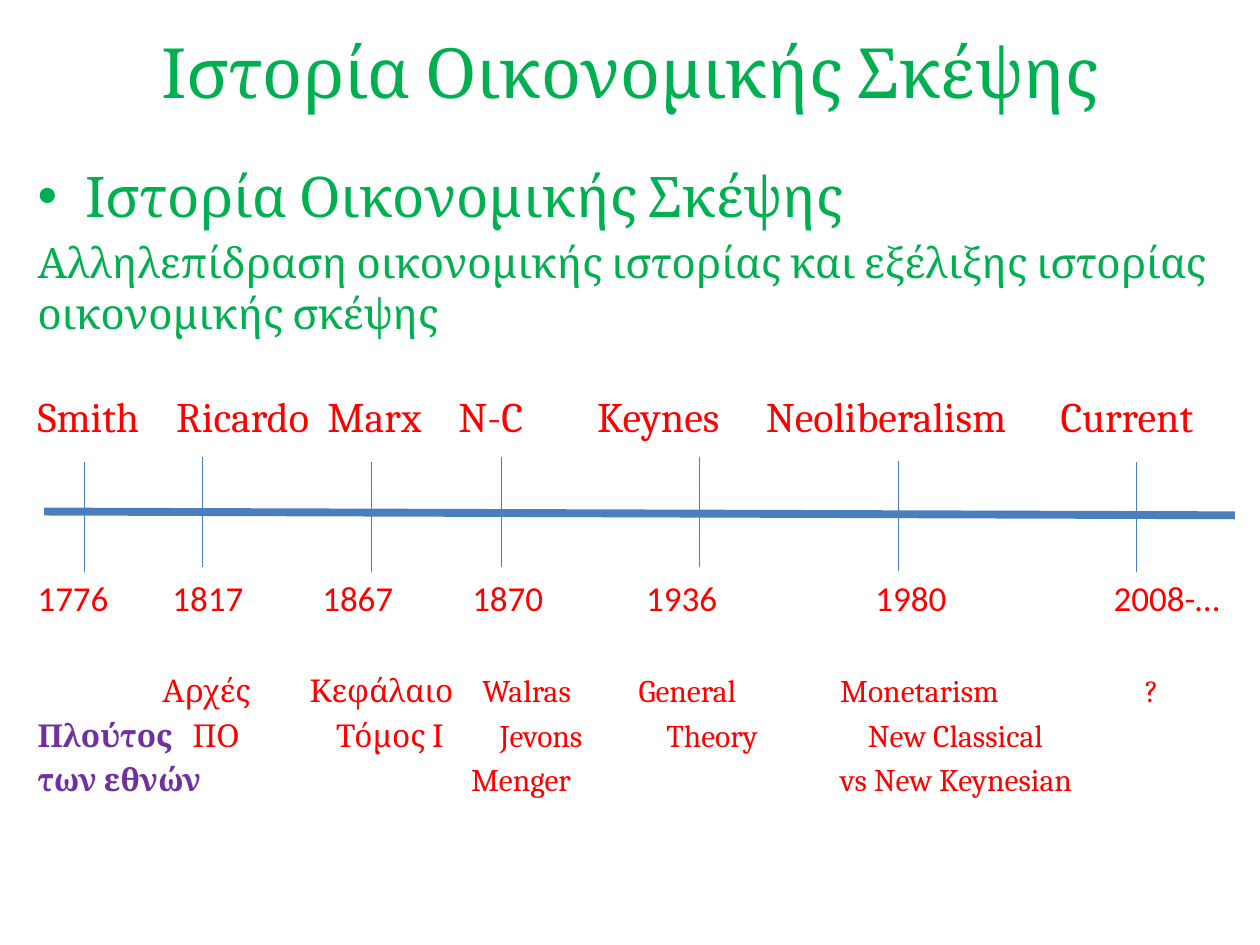
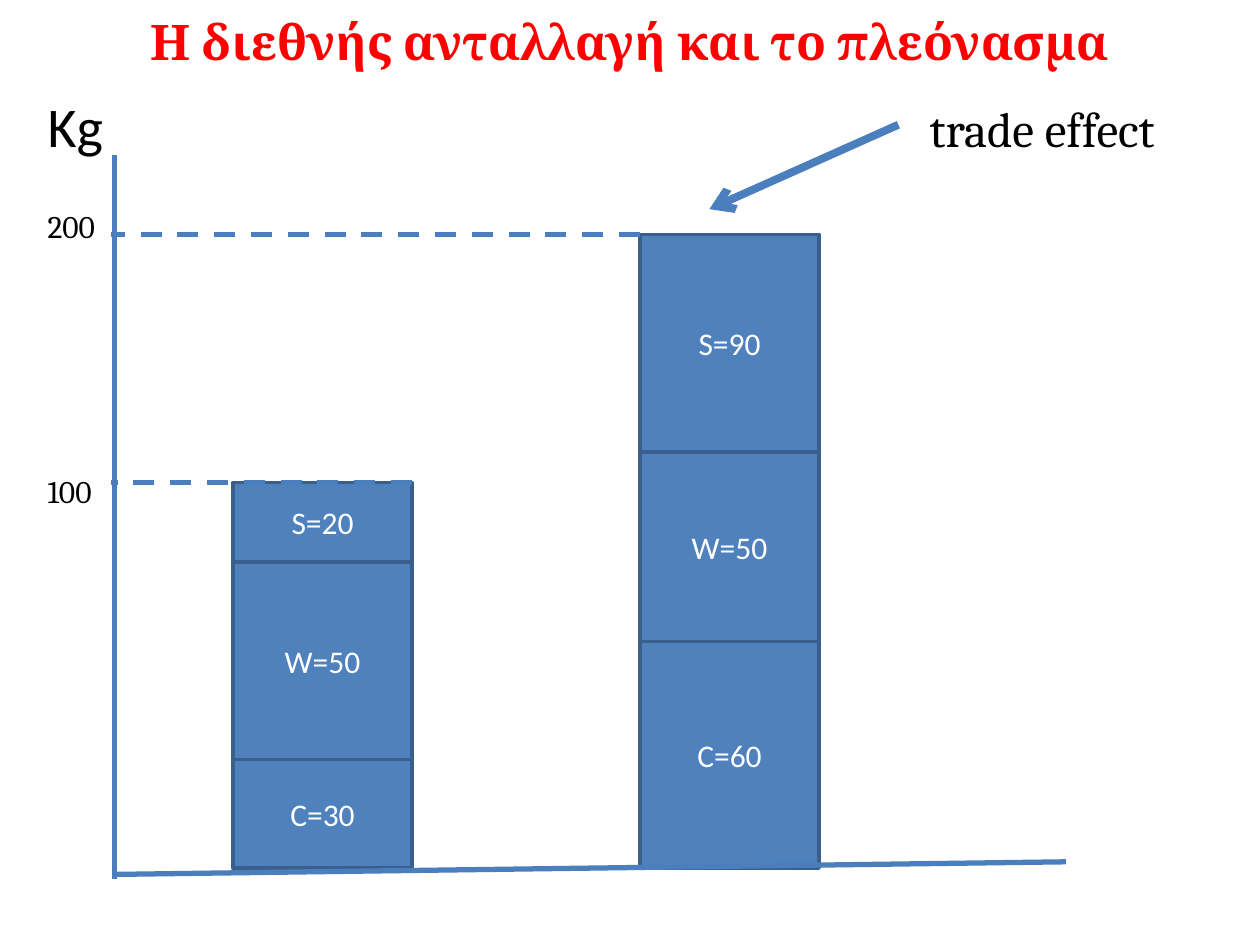
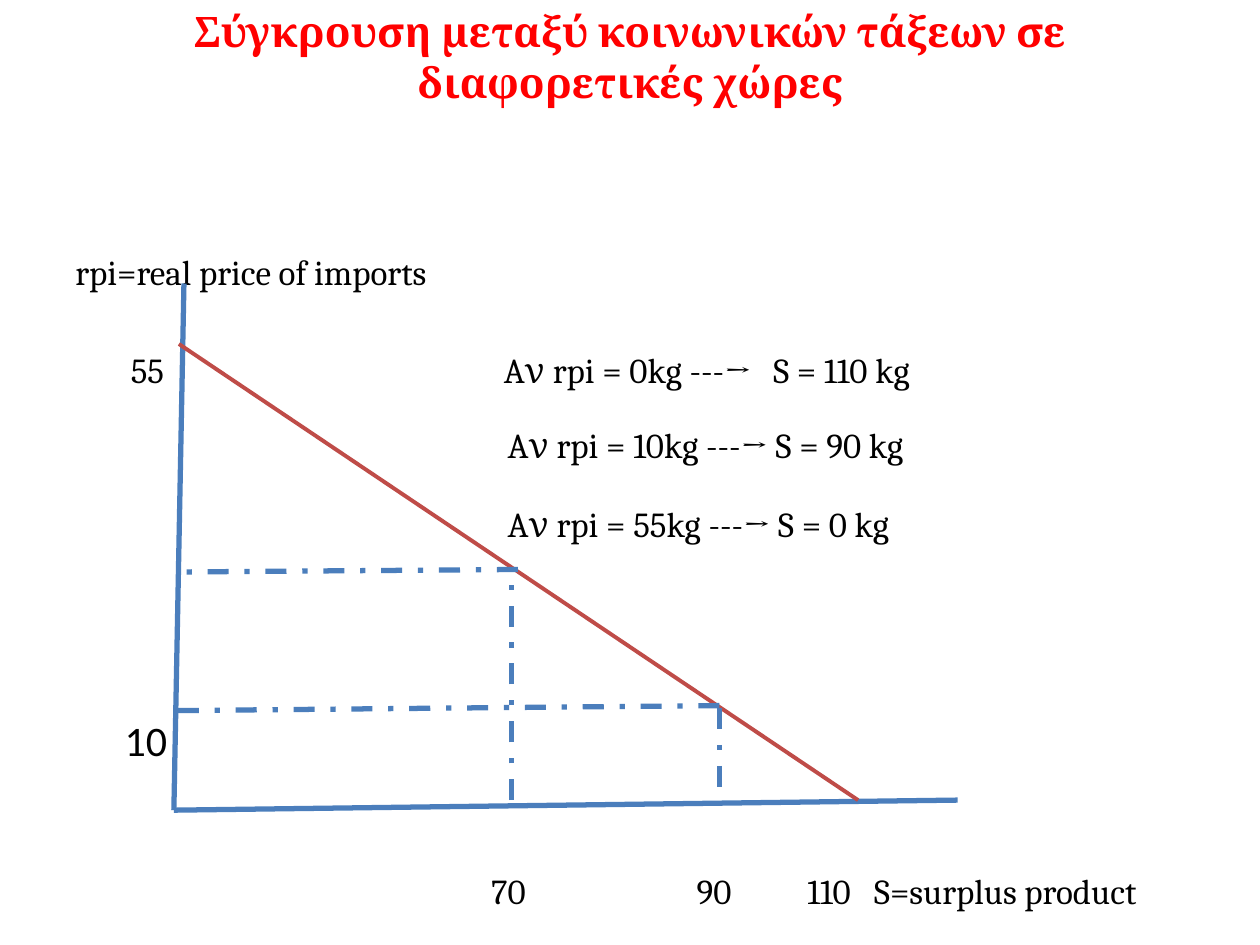
import pptx
import pptx.util
import pptx.dml.color
import pptx.enum.dml
import pptx.enum.shapes
import pptx.enum.text
import lxml.etree
import pptx.oxml.ns

presentation = pptx.Presentation()
presentation.slide_width = pptx.util.Inches(10)
presentation.slide_height = pptx.util.Inches(7.5)
column = presentation.slide_width / 100
row = presentation.slide_height / 75

GREEN, RED, PURPLE, BLACK, WHITE = "00B050", "FF0000", "7030A0", "000000", "FFFFFF"
LINE_BLUE, LINE_RED, BAR_FILL, BAR_EDGE = "4B7EBC", "BF4C48", "4F81BD", "3A5F8C"
SOLID = pptx.enum.dml.MSO_LINE.SOLID
DASH = pptx.enum.dml.MSO_LINE.DASH
DASH_DOT = pptx.enum.dml.MSO_LINE.DASH_DOT
MIDDLE = pptx.enum.text.MSO_ANCHOR.MIDDLE
CENTER = pptx.enum.text.PP_ALIGN.CENTER


def color(value):
    return pptx.dml.color.RGBColor.from_string(value)


def add_run(paragraph, text, size, font, tone, bold=False):
    run = paragraph.add_run()
    run.text = text
    run.font.size = pptx.util.Pt(size)
    run.font.name = font
    run.font.bold = bold
    run.font.color.rgb = color(tone)


heading = (32, "Cambria", GREEN)
statement = (24, "Cambria", GREEN)
thinker = (24, "Cambria", RED)
year = (20, "Calibri", RED)
work = (18, "Cambria", RED)
first_work = (18, "Cambria", PURPLE, True)
unit = (32, "Calibri", BLACK)
effect = (28, "Cambria", BLACK)
level = (18, "Cambria", BLACK)
note = (20, "Cambria", BLACK)
price = (24, "Calibri", BLACK)

ticks = [(6.7, 36.7), (16.1, 36.3), (29.5, 36.7), (39.8, 36.3),
         (55.5, 36.3), (90.2, 36.7), (71.3, 36.6)]

slides = [
    {
        "title": ("Ιστορία Οικονομικής Σκέψης", 2.1, 7.1, (39.6, "Cambria", GREEN)),
        "body": (2, 12.3, 98, 59.8),
        "paragraphs": [
            (0, [(0, "Ιστορία Οικονομικής Σκέψης", heading)]),
            (4.8, [(0, "Αλληλεπίδραση οικονομικής ιστορίας και εξέλιξης ιστορίας "
                       "οικονομικής σκέψης", statement)]),
            (30, [(0, "Smith", thinker), (11, "Ricardo", thinker), (23, "Marx", thinker),
                  (33.4, "N-C", thinker), (44.4, "Keynes", thinker),
                  (57.8, "Neoliberalism", thinker), (81.2, "Current", thinker)]),
            (77.5, [(0, "1776", year), (10.7, "1817", year), (22.6, "1867", year),
                    (34.5, "1870", year), (48.3, "1936", year), (66.5, "1980", year),
                    (85.4, "2008-…", year)]),
            (30.5, [(9.9, "Αρχές", work), (21.6, "Κεφάλαιο", work), (35.3, "Walras", work),
                    (47.7, "General", work), (63.7, "Monetarism", work), (87.9, "?", work)]),
            (3.6, [(0, "Πλούτος", first_work), (12.3, "ΠΟ", work), (23.7, "Τόμος Ι", work),
                   (36.7, "Jevons", work), (49.9, "Theory", work),
                   (65.9, "New Classical", work)]),
            (3.6, [(0, "των εθνών", first_work), (34.4, "Menger", work),
                   (63.7, "vs New Keynesian", work)]),
        ],
        "bars": [],
        "lines": [(3.5, 40.6, 98, 40.9, LINE_BLUE, 4.5, SOLID)]
                 + [(x, top, x, top + 8.7, LINE_BLUE, 0.75, SOLID) for x, top in ticks],
    },
    {
        "title": ("Η διεθνής ανταλλαγή και το πλεόνασμα", 1.3, 3.9, (28, "Cambria", RED, True)),
        "body": (2.8, 6.8, 93.7, 65.4),
        "paragraphs": [
            (0, [(0, "Kg", unit), (70, "trade effect", effect)]),
            (27.5, [(0, "200", level)]),
            (129.5, [(0, "100", level)]),
        ],
        "bars": [
            (18.5, [("C=30", 8.6), ("W=50", 15.7), ("S=20", 6.3)]),
            (50.8, [("C=60", 18), ("W=50", 15), ("S=90", 17.3)]),
        ],
        "lines": [
            (9.1, 12.3, 9.1, 69.8, LINE_BLUE, 3, SOLID),
            (84.6, 68.4, 9.1, 69.4, LINE_BLUE, 3, SOLID),
            (71.3, 9.9, 56.3, 16.6, LINE_BLUE, 4.5, "arrow"),
            (50.8, 18.6, 8.8, 18.6, LINE_BLUE, 3, DASH),
            (32.7, 38.3, 8.8, 38.3, LINE_BLUE, 3, DASH),
        ],
    },
    {
        "title": ("Σύγκρουση μεταξύ κοινωνικών τάξεων σε διαφορετικές χώρες", 0.5, 7.9,
                  (24, "Cambria", RED, True)),
        "body": (5, 19.4, 90, 51.2),
        "paragraphs": [
            (0, [(0, "rpi=real price of imports", note)]),
            (32, [(4.4, "55", note), (34, "Aν rpi = 0kg ---→", note),
                  (55.4, "S = 110 kg", note)]),
            (18.5, [(34.3, "Aν rpi = 10kg ---→ S = 90 kg", note)]),
            (21.5, [(34.3, "Aν rpi = 55kg ---→ S = 0 kg", note)]),
            (97, [(3.9, "10", price)]),
            (59.5, [(33, "70", note), (49.3, "90", note), (58.1, "110", note),
                    (63.4, "S=surplus product", note)]),
        ],
        "bars": [],
        "lines": [
            (14.6, 22.5, 13.8, 64.3, LINE_BLUE, 3, SOLID),
            (76, 63.5, 13.8, 64.3, LINE_BLUE, 3, SOLID),
            (14.2, 27.3, 68.1, 63.5, LINE_RED, 2.25, SOLID),
            (57.1, 56, 13.8, 56.4, LINE_BLUE, 3, DASH_DOT),
            (57.1, 56.2, 57.1, 63.7, LINE_BLUE, 3, DASH_DOT),
            (41.1, 45.2, 13.8, 45.4, LINE_BLUE, 3, DASH_DOT),
            (40.6, 63.5, 40.6, 45.2, LINE_BLUE, 3, DASH_DOT),
        ],
    },
]

for content in slides:
    slide = presentation.slides.add_slide(presentation.slide_layouts[6])

    title, top, height, style = content["title"]
    title_box = slide.shapes.add_textbox(
        int(5 * column), int(top * row), int(90 * column), int(height * row))
    title_box.text_frame.word_wrap = True
    title_box.text_frame.vertical_anchor = MIDDLE
    paragraph = title_box.text_frame.paragraphs[0]
    paragraph.alignment = CENTER
    add_run(paragraph, title, *style)

    left, top, width, height = content["body"]
    body_box = slide.shapes.add_textbox(
        int(left * column), int(top * row), int(width * column), int(height * row))
    body_box.text_frame.word_wrap = True
    for index, (space, cells) in enumerate(content["paragraphs"]):
        paragraph = body_box.text_frame.paragraphs[0] if index == 0 else body_box.text_frame.add_paragraph()
        properties = paragraph._p.get_or_add_pPr()
        if cells[0][2] == heading:
            properties.set("marL", str(int(3.8 * column)))
            properties.set("indent", str(int(-3.8 * column)))
            bullet_font = lxml.etree.SubElement(properties, pptx.oxml.ns.qn("a:buFont"))
            bullet_font.set("typeface", "Arial")
            bullet = lxml.etree.SubElement(properties, pptx.oxml.ns.qn("a:buChar"))
            bullet.set("char", "•")
        stops = [position for position, text, style in cells if position]
        if stops:
            tab_list = lxml.etree.SubElement(properties, pptx.oxml.ns.qn("a:tabLst"))
            for position in stops:
                tab = lxml.etree.SubElement(tab_list, pptx.oxml.ns.qn("a:tab"))
                tab.set("pos", str(int(position * column)))
                tab.set("algn", "l")
        if space:
            paragraph.space_before = pptx.util.Pt(space)
        for position, text, style in cells:
            add_run(paragraph, "\t" + text if position else text, *style)

    for left, parts in content["bars"]:
        bottom = 68.9
        for label, height in parts:
            bottom -= height
            bar = slide.shapes.add_shape(
                pptx.enum.shapes.MSO_SHAPE.RECTANGLE,
                int(left * column), int(bottom * row), int(14.2 * column), int(height * row))
            bar.shadow.inherit = False
            bar.fill.solid()
            bar.fill.fore_color.rgb = color(BAR_FILL)
            bar.line.color.rgb = color(BAR_EDGE)
            bar.line.width = pptx.util.Pt(2)
            bar.text_frame.vertical_anchor = MIDDLE
            paragraph = bar.text_frame.paragraphs[0]
            paragraph.alignment = CENTER
            add_run(paragraph, label, 18, "Calibri", WHITE)

    for start_x, start_y, end_x, end_y, tone, weight, pattern in content["lines"]:
        connector = slide.shapes.add_connector(
            pptx.enum.shapes.MSO_CONNECTOR.STRAIGHT,
            int(start_x * column), int(start_y * row), int(end_x * column), int(end_y * row))
        connector.line.color.rgb = color(tone)
        connector.line.width = pptx.util.Pt(weight)
        if pattern == "arrow":
            arrowhead = lxml.etree.SubElement(
                connector.line._get_or_add_ln(), pptx.oxml.ns.qn("a:tailEnd"))
            arrowhead.set("type", "arrow")
        elif pattern != SOLID:
            connector.line.dash_style = pattern
        lxml.etree.SubElement(connector._element.spPr, pptx.oxml.ns.qn("a:effectLst"))

presentation.save("out.pptx")
